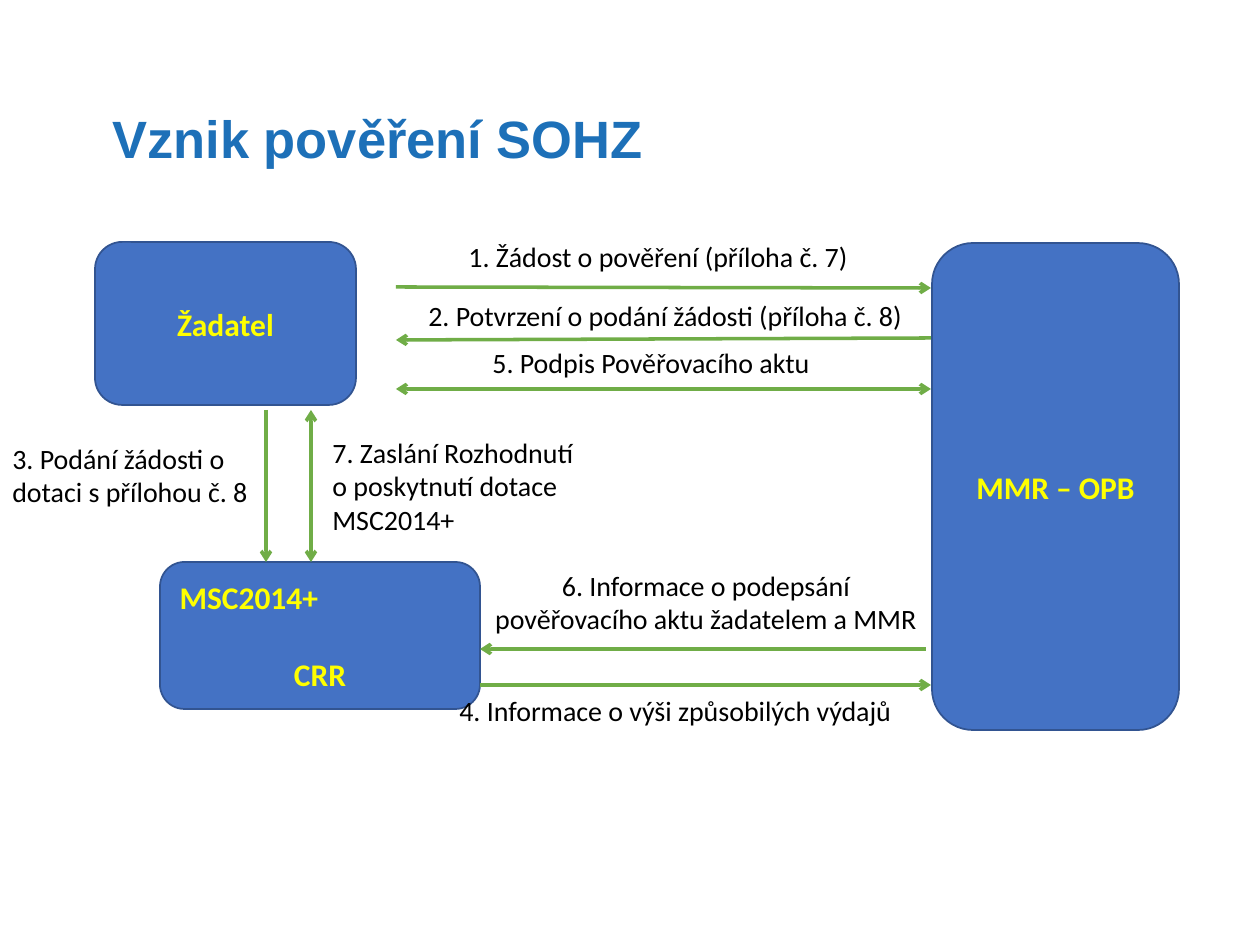
import pptx
import pptx.util
import pptx.dml.color
import pptx.enum.shapes
import pptx.enum.text
import pptx.oxml.ns
from lxml import etree

PX_PER_INCH = 126
LEFT = pptx.enum.text.PP_ALIGN.LEFT
CENTER = pptx.enum.text.PP_ALIGN.CENTER
BLUE, BORDER, GREEN, YELLOW = "4472C4", "325491", "70AD47", "FFFF00"

TITLE = ("Vznik pověření SOHZ", (100, 100, 1062, 77))

# Boxes: place in px, then (text, alignment, space before in pt)
BOXES = [
    ((95, 242, 261, 163), [("Žadatel", CENTER, 0)]),
    ((932, 243, 247, 487), [("MMR – OPB", CENTER, 0)]),
    ((160, 562, 320, 147), [("MSC2014+", LEFT, 0), ("CRR", CENTER, 22)]),
]

# Arrows: start, end, arrowheads at both ends
ARROWS = [
    ((396, 287), (931, 288), False),
    ((931, 338), (396, 340), False),
    ((266, 410), (266, 562), False),
    ((480, 685), (931, 685), False),
    ((396, 389), (931, 389), True),
    ((311, 410), (311, 562), True),
    ((926, 649), (480, 649), False),
]

# Step labels: text, place in px, alignment
LABELS = [
    ("1. Žádost o pověření (příloha č. 7)", (456, 233, 450, 47), LEFT),
    ("2. Potvrzení o podání žádosti (příloha č. 8)", (416, 292, 504, 47), LEFT),
    ("3. Podání žádosti o dotaci s přílohou č. 8", (0, 435, 266, 81), LEFT),
    ("4. Informace o výši způsobilých výdajů", (431, 687, 489, 47), CENTER),
    ("5. Podpis Pověřovacího aktu", (480, 339, 445, 47), LEFT),
    ("6. Informace o podepsání pověřovacího aktu žadatelem a MMR",
     (480, 562, 452, 81), CENTER),
    ("7. Zaslání Rozhodnutí o poskytnutí dotace MSC2014+",
     (320, 429, 272, 115), LEFT),
]


def px(n):
    return pptx.util.Emu(round(n * 914400 / PX_PER_INCH))


def rgb(value):
    return pptx.dml.color.RGBColor.from_string(value)


def style(p, align, size, color, bold=False, name="Calibri"):
    p.alignment = align
    for r in p.runs:
        r.font.name = name
        r.font.size = pptx.util.Pt(size)
        r.font.bold = bold
        r.font.color.rgb = rgb(color)


def add_text(s, text, place, align, size, color, **font):
    tf = s.shapes.add_textbox(*map(px, place)).text_frame
    tf.word_wrap = True
    tf.text = text
    style(tf.paragraphs[0], align, size, color, **font)


def add_box(s, place, lines):
    sp = s.shapes.add_shape(
        pptx.enum.shapes.MSO_SHAPE.ROUNDED_RECTANGLE, *map(px, place))
    sp.shadow.inherit = False
    sp.fill.solid()
    sp.fill.fore_color.rgb = rgb(BLUE)
    sp.line.color.rgb = rgb(BORDER)
    sp.line.width = pptx.util.Pt(1)
    tf = sp.text_frame
    tf.word_wrap = True
    tf.vertical_anchor = pptx.enum.text.MSO_ANCHOR.MIDDLE
    tf.text = "\n".join(text for text, _, _ in lines)
    for p, (_, align, gap) in zip(tf.paragraphs, lines):
        style(p, align, 18, YELLOW, bold=True)
        if gap:
            p.space_before = pptx.util.Pt(gap)


def add_arrow(s, start, end, both):
    c = s.shapes.add_connector(
        pptx.enum.shapes.MSO_CONNECTOR.STRAIGHT, *map(px, start + end))
    c.line.color.rgb = rgb(GREEN)
    c.line.width = pptx.util.Pt(3 - 1)
    qn = pptx.oxml.ns.qn
    ln = c.line._get_or_add_ln()
    for tag in ["a:headEnd", "a:tailEnd"] if both else ["a:tailEnd"]:
        etree.SubElement(ln, qn(tag), type="arrow")
    etree.SubElement(c._element.spPr, qn("a:effectLst"))


def main():
    prs = pptx.Presentation()
    prs.slide_width, prs.slide_height = px(1260), px(945)
    s = prs.slides.add_slide(prs.slide_layouts[6])

    add_text(s, *TITLE, LEFT, 30, "1D70B8", bold=True, name="Arial")
    for box in BOXES:
        add_box(s, *box)
    for arrow in ARROWS:
        add_arrow(s, *arrow)
    for label in LABELS:
        add_text(s, *label, 16, "000000")

    prs.save("out.pptx")


if __name__ == "__main__":
    main()
